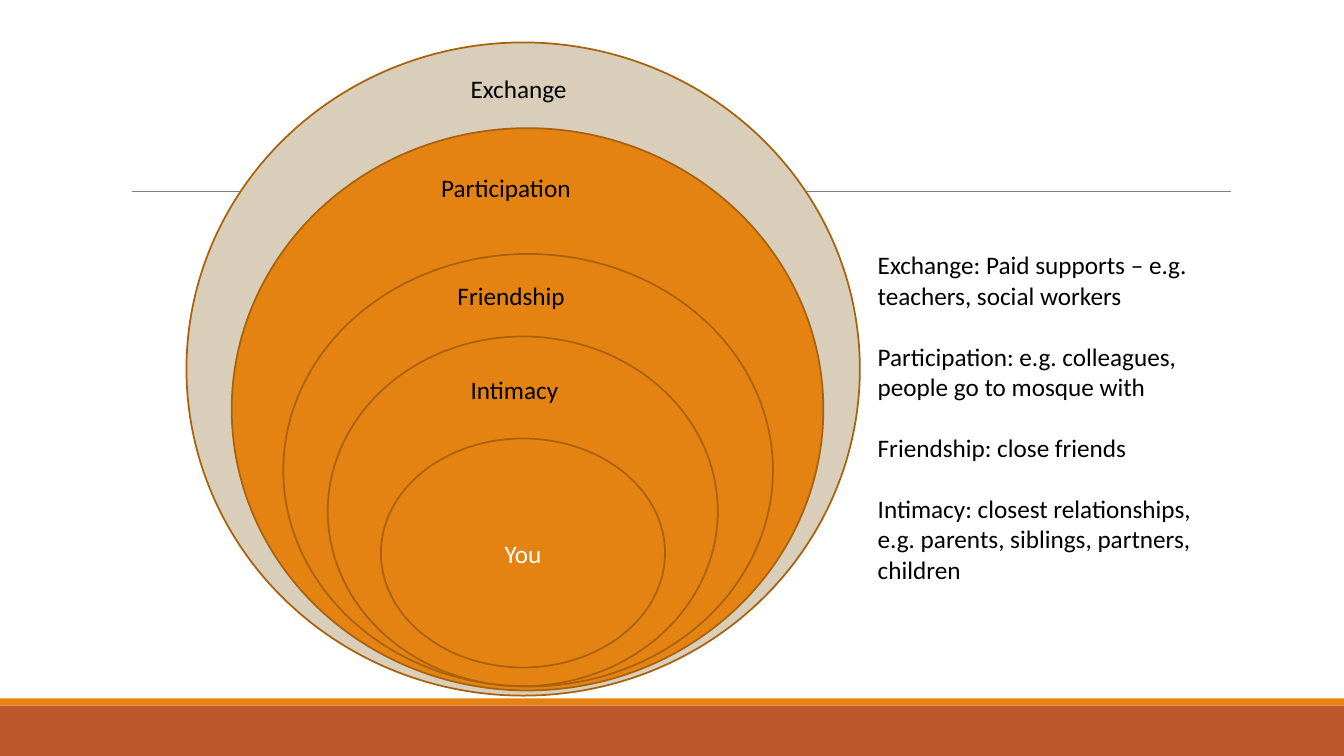
from dataclasses import dataclass
from lxml.etree import SubElement
from pptx import Presentation
from pptx.dml.color import RGBColor
from pptx.enum.shapes import MSO_CONNECTOR as Connector, MSO_SHAPE as Preset
from pptx.enum.text import MSO_ANCHOR as Anchor, PP_ALIGN as Align
from pptx.oxml.ns import qn
from pptx.util import Cm, Pt

CIRCLES = [
    ("Exchange", "sand", (4.7, 1.07, 16.97, 16.46), (11.61, 1.73, 6.07)),
    ("Participation", "orange", (5.84, 3.23, 14.91, 14.17), (10.87, 4.22, 5.05)),
    ("Friendship", "orange", (7.14, 6.4, 12.34, 10.9), (11.28, 6.93, 4.09)),
    ("Intimacy", "orange", (8.26, 8.48, 9.83, 8.81), (11.61, 9.3, 3.15)),
    ("You", "orange", (9.6, 11.05, 7.16, 5.77), None),
]
DESCRIPTIONS = [
    ("Exchange: Paid supports – e.g. teachers, social workers",),
    ("Participation: e.g. colleagues,", "people go to mosque with"),
    ("Friendship: close friends",),
    ("Intimacy: closest relationships, e.g. parents, siblings, partners, children",),
]
DESCRIPTION_BOX = (21.87, 6.17, 9.47, 8.71)
BANDS = [("rust", 17.78, 1.27), ("orange", 17.6, 0.18)]
RULE = (3.33, 31.01, 4.83)
SLIDE_WIDTH, SLIDE_HEIGHT = 33.87, 19.05
LABEL_HEIGHT = 1.02


@dataclass(frozen=True)
class Theme:
    sand: str = "D8CEBA"
    orange: str = "E48312"
    rust: str = "BD582C"
    outline: str = "A9610D"
    rule: str = "808080"
    ink: str = "000000"
    light: str = "FFFFFF"
    font: str = "Calibri"
    body_size: float = 18
    group_gap: float = 22
    outline_width: float = 1.25
    rule_width: float = 0.5


THEME = Theme()


def color(name):
    return RGBColor.from_string(getattr(THEME, name))


def write(text_frame, text, new=False, ink="ink", align=Align.LEFT, gap=0):
    paragraph = text_frame.add_paragraph() if new else text_frame.paragraphs[0]
    paragraph.alignment = align
    paragraph.space_before = Pt(gap)
    run = paragraph.add_run()
    run.text = text
    run.font.name = THEME.font
    run.font.size = Pt(THEME.body_size)
    run.font.color.rgb = color(ink)


def add_preset(slide, preset, box, fill, outline=None):
    shape = slide.shapes.add_shape(preset, *map(Cm, box))
    shape.shadow.inherit = False
    shape.fill.solid()
    shape.fill.fore_color.rgb = color(fill)
    if outline:
        shape.line.color.rgb = color(outline)
        shape.line.width = Pt(THEME.outline_width)
    else:
        shape.line.fill.background()
    return shape


def add_text_frame(slide, box):
    text_frame = slide.shapes.add_textbox(*map(Cm, box)).text_frame
    text_frame.word_wrap = True
    return text_frame


def add_backdrop(slide):
    for fill, top, height in BANDS:
        add_preset(slide, Preset.RECTANGLE, (0, top, SLIDE_WIDTH, height), fill)
    left, right, y = map(Cm, RULE)
    rule = slide.shapes.add_connector(Connector.STRAIGHT, left, y, right, y)
    rule.line.color.rgb = color("rule")
    rule.line.width = Pt(THEME.rule_width)
    SubElement(rule._element.spPr, qn("a:effectLst"))


def add_circles(slide):
    for name, fill, box, label in CIRCLES:
        circle = add_preset(slide, Preset.OVAL, box, fill, "outline")
        if label:
            write(add_text_frame(slide, (*label, LABEL_HEIGHT)), name)
        else:
            circle.text_frame.vertical_anchor = Anchor.MIDDLE
            write(circle.text_frame, name, ink="light", align=Align.CENTER)


def add_descriptions(slide):
    text_frame = add_text_frame(slide, DESCRIPTION_BOX)
    for group, lines in enumerate(DESCRIPTIONS):
        for index, line in enumerate(lines):
            starts_group = group > 0 and index == 0
            write(text_frame, line, new=group + index > 0,
                  gap=THEME.group_gap if starts_group else 0)


def main():
    presentation = Presentation()
    presentation.slide_width = Cm(SLIDE_WIDTH)
    presentation.slide_height = Cm(SLIDE_HEIGHT)
    slide = presentation.slides.add_slide(presentation.slide_layouts[6])
    add_backdrop(slide)
    add_circles(slide)
    add_descriptions(slide)
    presentation.save("out.pptx")


if __name__ == "__main__":
    main()
